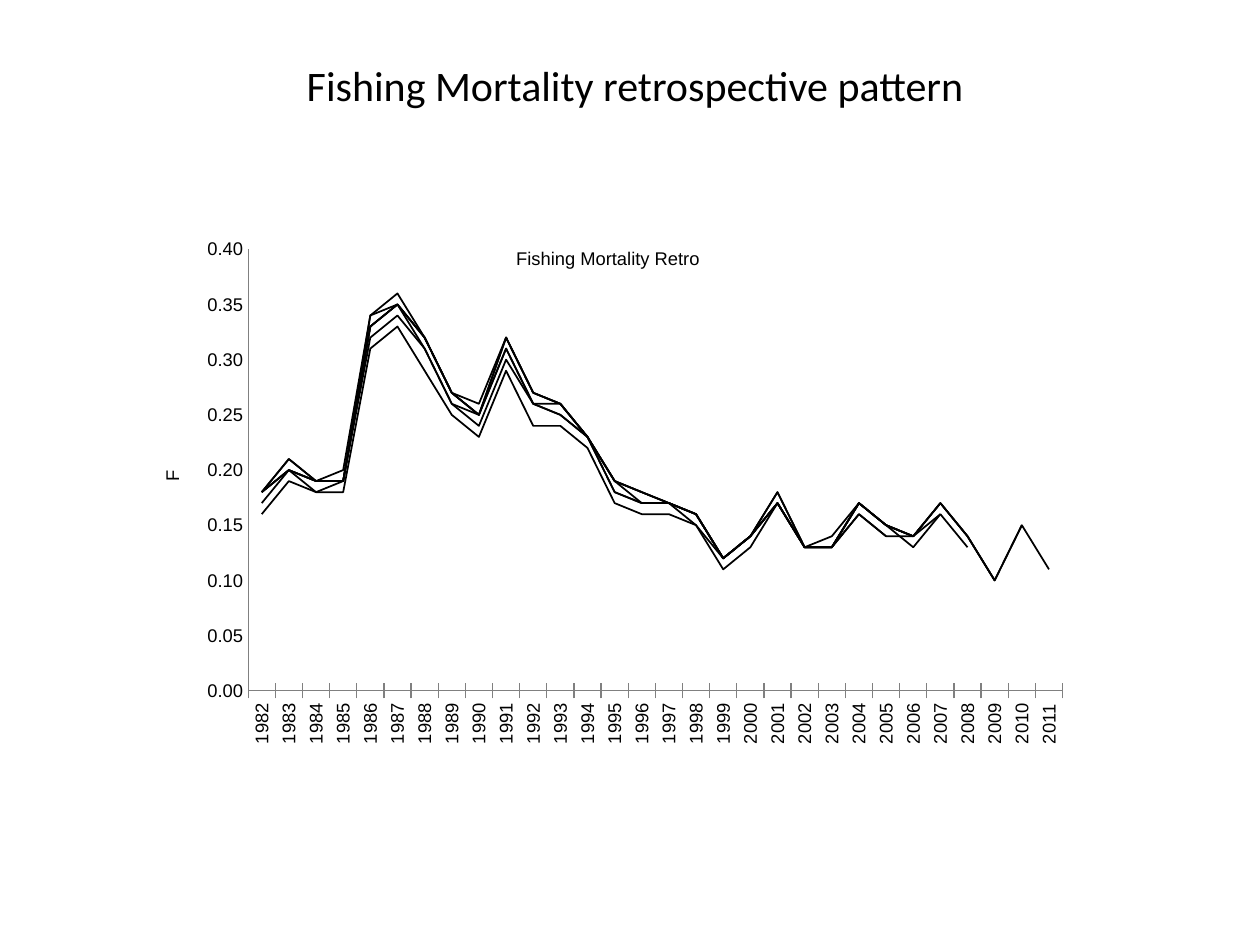
import pptx
import pptx.chart.data
import pptx.dml.color
import pptx.enum.chart
import pptx.enum.text
import pptx.oxml
import pptx.oxml.ns
import pptx.util
from pptx.util import Inches

BLACK = "000000"
AXIS_GRAY = "808080"
YEARS = [str(year) for year in range(1982, 2012)]
RETRO_RUNS = [
    [0.18, 0.21, 0.19, 0.2, 0.34, 0.36, 0.32, 0.27, 0.26, 0.32, 0.27, 0.26,
     0.23, 0.19, 0.18, 0.17, 0.16, 0.12, 0.14, 0.17, 0.13, 0.13, 0.16, 0.14],
    [0.18, 0.2, 0.19, 0.19, 0.33, 0.35, 0.32, 0.27, 0.25, 0.31, 0.26, 0.26,
     0.23, 0.19, 0.17, 0.17, 0.16, 0.12, 0.14, 0.17, 0.13, 0.13, 0.16, 0.14,
     0.14],
    [0.18, 0.2, 0.19, 0.19, 0.33, 0.35, 0.32, 0.27, 0.25, 0.32, 0.27, 0.26,
     0.23, 0.19, 0.18, 0.17, 0.16, 0.12, 0.14, 0.18, 0.13, 0.13, 0.17, 0.15,
     0.13, 0.16],
    [0.17, 0.2, 0.18, 0.19, 0.32, 0.34, 0.31, 0.26, 0.24, 0.3, 0.26, 0.25,
     0.23, 0.18, 0.17, 0.17, 0.15, 0.12, 0.14, 0.17, 0.13, 0.13, 0.17, 0.15,
     0.14, 0.16, 0.13],
    [0.16, 0.19, 0.18, 0.18, 0.31, 0.33, 0.29, 0.25, 0.23, 0.29, 0.24, 0.24,
     0.22, 0.17, 0.16, 0.16, 0.15, 0.11, 0.13, 0.17, 0.13, 0.13, 0.17, 0.15,
     0.14, 0.17, 0.14, 0.1],
    [0.18, 0.2, 0.19, 0.19, 0.33, 0.35, 0.31, 0.26, 0.25, 0.31, 0.26, 0.25,
     0.23, 0.18, 0.17, 0.17, 0.16, 0.12, 0.14, 0.17, 0.13, 0.13, 0.17, 0.15,
     0.14, 0.17, 0.14, 0.1, 0.15],
    [0.18, 0.21, 0.19, 0.19, 0.34, 0.35, 0.32, 0.27, 0.25, 0.32, 0.27, 0.26,
     0.23, 0.19, 0.18, 0.17, 0.16, 0.12, 0.14, 0.18, 0.13, 0.14, 0.17, 0.15,
     0.14, 0.17, 0.14, 0.1, 0.15, 0.11],
]


def rgb(value):
    return pptx.dml.color.RGBColor.from_string(value)


def set_attrs(obj, values):
    for name, value in values.items():
        setattr(obj, name, value)


def style_font(font, name, size):
    set_attrs(font, {"name": name, "size": pptx.util.Pt(size), "bold": False})
    font.color.rgb = rgb(BLACK)


def style_line(line, color, width):
    line.color.rgb = rgb(color)
    line.width = pptx.util.Pt(width)


def set_layout(element, index, x, y, w=None, h=None):
    for old in element.findall(pptx.oxml.ns.qn("c:layout")):
        element.remove(old)
    fields = {"xMode": "edge", "yMode": "edge", "x": x, "y": y}
    if w is not None:
        fields = {"layoutTarget": "inner", **fields, "w": w, "h": h}
    body = "".join(f'<c:{tag} val="{val}"/>' for tag, val in fields.items())
    element.insert(index, pptx.oxml.parse_xml(
        f'<c:layout {pptx.oxml.ns.nsdecls("c")}>'
        f"<c:manualLayout>{body}</c:manualLayout></c:layout>"))


def set_title(title, text, x, y):
    p = title.text_frame.paragraphs[0]
    r = p.add_run()
    r.text = text
    style_font(r.font, "Arial", 10.5)
    set_layout(title._element, 1, x, y)


def add_heading(slide, text):
    sp = slide.shapes.add_textbox(Inches(2), Inches(0.42), Inches(6.08), Inches(0.5))
    tf = sp.text_frame
    set_attrs(tf, {"word_wrap": True,
                   "auto_size": pptx.enum.text.MSO_AUTO_SIZE.SHAPE_TO_FIT_TEXT})
    p = tf.paragraphs[0]
    p.alignment = pptx.enum.text.PP_ALIGN.CENTER
    r = p.add_run()
    r.text = text
    style_font(r.font, "Calibri", 24)


def add_retro_chart(slide):
    data = pptx.chart.data.CategoryChartData(number_format="0.00")
    data.categories = YEARS
    for number, run in enumerate(RETRO_RUNS, 1):
        data.add_series(f"Series {number}", run + [None] * (len(YEARS) - len(run)))
    chart = slide.shapes.add_chart(
        pptx.enum.chart.XL_CHART_TYPE.LINE, Inches(1), Inches(1.42),
        Inches(8.08), Inches(5.08), data).chart
    chart.has_legend = False
    style_font(chart.font, "Arial", 10.5)
    set_title(chart.chart_title, "Fishing Mortality Retro", 0.38, 0.1)
    chart.chart_title.include_in_layout = True
    set_layout(chart.plots[0]._element.getparent(), 0, 0.12, 0.11, 0.8, 0.69)
    for series in chart.plots[0].series:
        series.smooth = False
        style_line(series.format.line, BLACK, 1)
    style_axes(chart)


def style_axes(chart):
    marks = pptx.enum.chart.XL_TICK_MARK
    formats = {
        chart.category_axis: {"major_tick_mark": marks.CROSS},
        chart.value_axis: {"major_tick_mark": marks.NONE, "minimum_scale": 0,
                           "maximum_scale": 0.4, "major_unit": 0.05},
    }
    for axis, values in formats.items():
        set_attrs(axis, {"has_major_gridlines": False,
                         "minor_tick_mark": marks.NONE, **values})
        style_line(axis.format.line, AXIS_GRAY, 0.75)
        style_font(axis.tick_labels.font, "Arial", 10.5)
    labels = chart.category_axis._element.find(pptx.oxml.ns.qn("c:txPr"))
    labels.find(pptx.oxml.ns.qn("a:bodyPr")).set("rot", "-5400000")
    set_attrs(chart.value_axis.tick_labels,
              {"number_format": "#,##0.00", "number_format_is_linked": False})
    title = chart.value_axis.axis_title
    set_title(title, " F", 0.03, 0.45)
    body = title.text_frame._txBody.find(pptx.oxml.ns.qn("a:bodyPr"))
    body.set("rot", "-5400000")
    body.set("vert", "horz")


def main():
    prs = pptx.Presentation()
    set_attrs(prs, {"slide_width": Inches(10), "slide_height": Inches(7.5)})
    slide = prs.slides.add_slide(prs.slide_layouts[6])
    add_retro_chart(slide)
    add_heading(slide, "Fishing Mortality retrospective pattern")
    prs.save("out.pptx")


if __name__ == "__main__":
    main()
